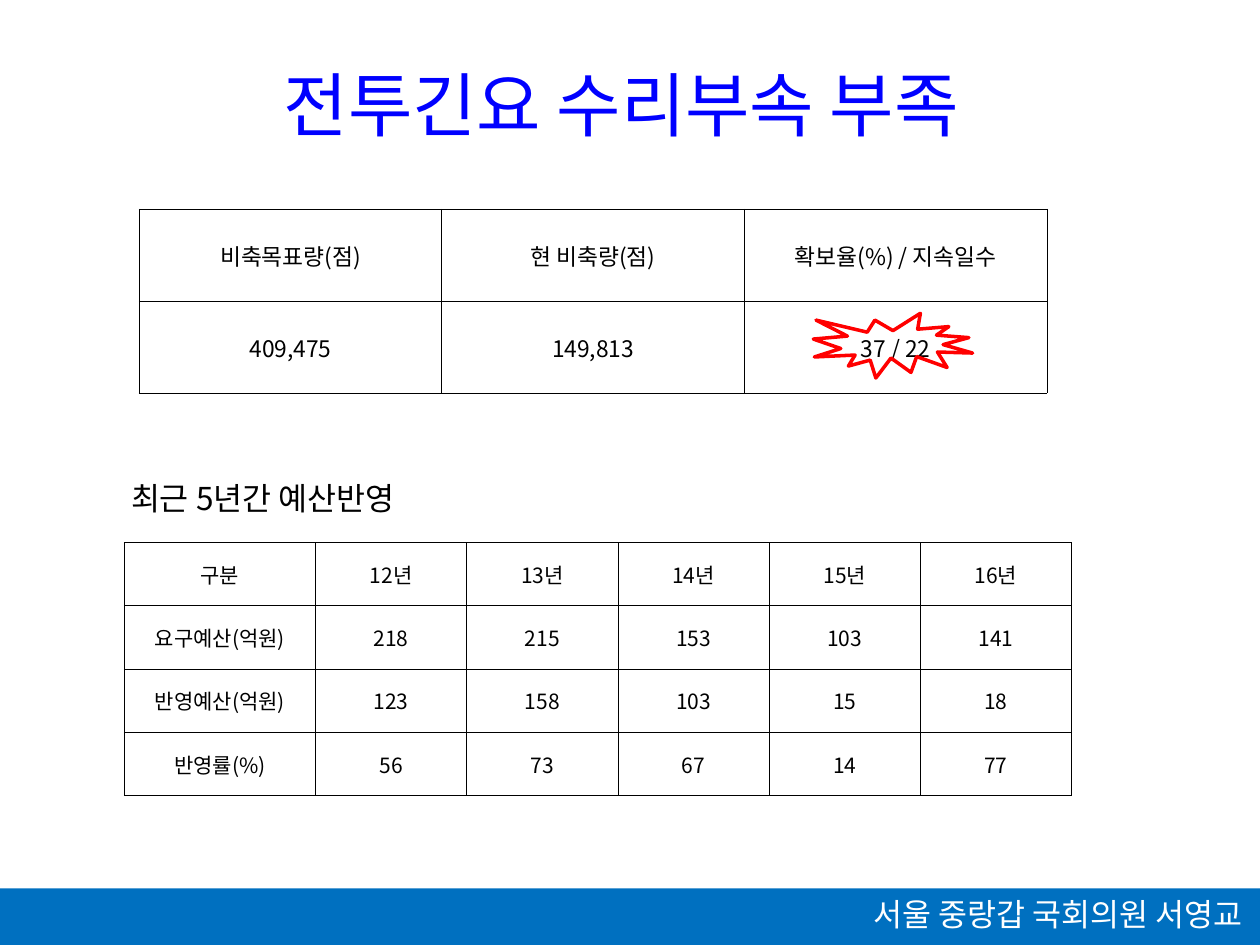
from lxml import etree
from pptx import Presentation
from pptx import util as u
from pptx.dml.color import RGBColor
from pptx.enum import shapes, text
from pptx.oxml import ns

COLOURS = {"title": "0000FF", "band": "0070C0", "light": "FFFFFF", "ink": "000000", "alert": "FF0000"}
FONT = "Noto Sans CJK KR"
ALIGN = text.PP_ALIGN


def colour(name):
    """Look up a palette colour."""
    return RGBColor.from_string(COLOURS[name])


def write(frame, words, size=18, ink="ink", align=ALIGN.LEFT, hanging=0):
    """Put one formatted paragraph into a text frame."""
    paragraph = frame.paragraphs[0]
    paragraph.alignment = align
    if hanging:
        properties = paragraph._p.get_or_add_pPr()
        properties.set("marL", str(u.Pt(hanging)))
        properties.set("indent", str(-u.Pt(hanging)))
    run = paragraph.add_run()
    run.text = words
    run.font.size = u.Pt(size)
    run.font.name = FONT
    run.font.color.rgb = colour(ink)
    etree.SubElement(run.font._element, ns.qn("a:ea"), typeface=FONT)


class Page:
    """Hold the current slide and the style of its elements."""

    def __init__(self, slide, rule=0.33):
        self.slide = slide
        self.rule = rule

    def label(self, box, words, wrap=True, **style):
        """Add a text box that grows with its text."""
        frame = self.slide.shapes.add_textbox(*map(u.Pt, box)).text_frame
        frame.word_wrap = wrap
        frame.auto_size = text.MSO_AUTO_SIZE.SHAPE_TO_FIT_TEXT
        frame.vertical_anchor = text.MSO_ANCHOR.MIDDLE
        write(frame, words, **style)

    def shape(self, kind, box, fill=None, line=None, weight=2):
        """Add a preset shape with an optional fill and outline."""
        form = self.slide.shapes.add_shape(kind, *map(u.Pt, box))
        form.shadow.inherit = False
        if fill:
            form.fill.solid()
            form.fill.fore_color.rgb = colour(fill)
        else:
            form.fill.background()
        if line:
            form.line.color.rgb = colour(line)
            form.line.width = u.Pt(weight)
        else:
            form.line.fill.background()

    def border(self, cell):
        """Draw a thin rule on each side of a cell."""
        properties = cell._tc.get_or_add_tcPr()
        for position, side in enumerate(("lnL", "lnR", "lnT", "lnB")):
            edge = etree.Element(ns.qn(f"a:{side}"), w=str(u.Pt(self.rule)))
            fill = etree.SubElement(edge, ns.qn("a:solidFill"))
            etree.SubElement(fill, ns.qn("a:srgbClr"), val=COLOURS["ink"])
            properties.insert(position, edge)

    def table(self, left, top, widths, row_height, rows, size):
        """Add a ruled table of centred text."""
        height = row_height * len(rows)
        box = map(u.Pt, (left, top, sum(widths), height))
        grid = self.slide.shapes.add_table(len(rows), len(widths), *box).table
        grid.first_row = grid.horz_banding = False
        for column, width in zip(grid.columns, widths):
            column.width = u.Pt(width)
        for row, values in zip(grid.rows, rows):
            row.height = u.Pt(row_height)
            for cell, words in zip(row.cells, values):
                cell.fill.background()
                cell.vertical_anchor = text.MSO_ANCHOR.MIDDLE
                write(cell.text_frame, words, size=size, align=ALIGN.CENTER)
                self.border(cell)


def main():
    """Build the slide and save it."""
    deck = Presentation()
    deck.slide_width, deck.slide_height = u.Pt(720), u.Pt(540)
    page = Page(deck.slides.add_slide(deck.slide_layouts[6]))
    preset = shapes.MSO_SHAPE

    page.label((134, 31.5, 442, 55), "전투긴요 수리부속 부족", wrap=False, size=40,
               ink="title", align=ALIGN.CENTER, hanging=21)
    page.shape(preset.RECTANGLE, (0, 507.6, 720, 32.4), fill="band")
    page.label((433.5, 507.6, 283.5, 29.5), "서울 중랑갑 국회의원 서영교", ink="light", align=ALIGN.RIGHT)

    stock = [
        ("비축목표량(점)", "현 비축량(점)", "확보율(%) / 지속일수"),
        ("409,475", "149,813", "37 / 22"),
    ]
    page.table(79.5, 119.5, [172.9] * 3, 52.6, stock, size=13)
    page.shape(preset.EXPLOSION1, (464.8, 179, 91, 37), line="alert")

    budget = [
        ("구분", "12년", "13년", "14년", "15년", "16년"),
        ("요구예산(억원)", "218", "215", "153", "103", "141"),
        ("반영예산(억원)", "123", "158", "103", "15", "18"),
        ("반영률(%)", "56", "73", "67", "14", "77"),
    ]
    page.table(70.9, 309.9, [109.4] + [86.4] * 5, 36.2, budget, size=12)
    page.label((67.8, 270, 201.6, 29), "최근 5년간 예산반영")

    deck.save("out.pptx")


if __name__ == "__main__":
    main()
